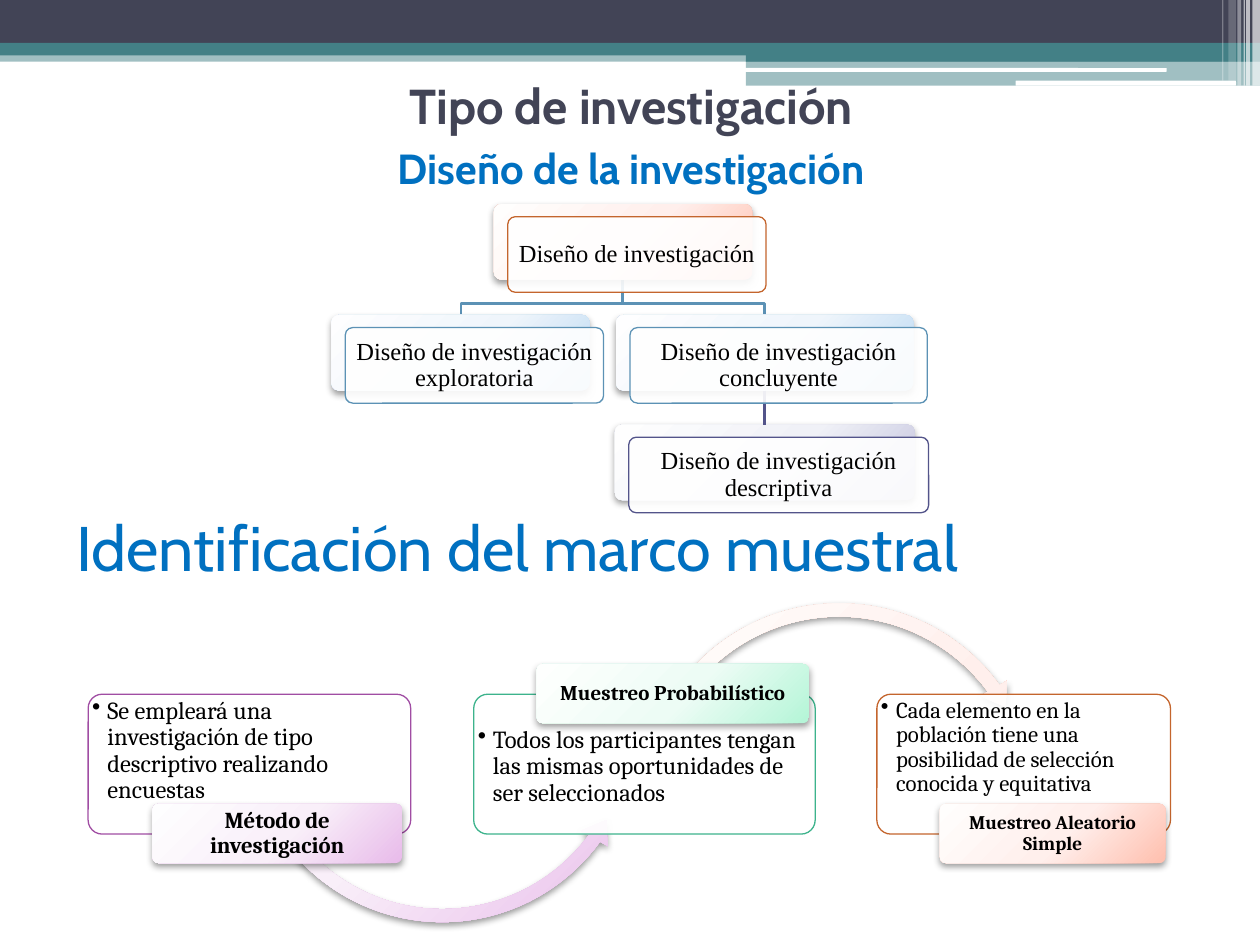
from dataclasses import dataclass
from typing import Any

from lxml.etree import SubElement
from pptx import Presentation
from pptx.dml.color import RGBColor
from pptx.enum.shapes import MSO_CONNECTOR as LINK, MSO_SHAPE as SHAPE
from pptx.enum.text import MSO_ANCHOR as ANCHOR, PP_ALIGN as ALIGN
from pptx.oxml import parse_xml
from pptx.oxml.ns import nsdecls, qn
from pptx.util import Inches, Pt

ORANGE = ["FFFEFD", "FFEFEC", "FFBFAE"]
PURPLE = ["FEFEFF", "F9EFF9", "E8BBEA"]
GREEN = ["FEFFFE", "EDFCF5", "B4F5D7"]
BLUE = ["FEFEFF", "EFF5FB", "BAD8F2"]
INDIGO = ["FEFEFE", "F0F1F7", "C2C2DD"]


def rgb(code):
    """Turn a hex string into a colour."""
    return RGBColor.from_string(code)


def write(frame, text, size, font, color="000000", bold=False, align=ALIGN.CENTER,
          anchor=ANCHOR.MIDDLE, spacing=None, insets=None, bullet=None, new=False, before=0):
    """Write one formatted paragraph in a text frame."""
    frame.word_wrap = True
    frame.vertical_anchor = anchor
    if insets:
        (frame.margin_left, frame.margin_top,
         frame.margin_right, frame.margin_bottom) = map(Inches, insets)
    paragraph = frame.add_paragraph() if new else frame.paragraphs[0]
    paragraph.alignment = align
    paragraph.space_before = Pt(before)
    if spacing:
        paragraph.line_spacing = spacing
    run = paragraph.add_run()
    run.text = text
    run.font.size, run.font.name, run.font.bold = Pt(size), font, bold
    run.font.color.rgb = rgb(color)
    if bullet:
        properties = paragraph._p.get_or_add_pPr()
        properties.set("marL", str(Inches(0.12)))
        properties.set("indent", str(-Inches(0.12)))
        SubElement(properties, qn("a:buChar"), char=bullet)


@dataclass
class Deck:
    """Hold the style and the current slide."""

    slide: Any
    heading: str = "Cabin"
    body: str = "Cambria"
    chart: str = "Times New Roman"

    def shape(self, box, fill, opacity=100, line=None, kind=SHAPE.RECTANGLE, adjust=()):
        """Add a flat preset shape."""
        shape = self.slide.shapes.add_shape(kind, *map(Inches, box))
        shape.shadow.inherit = False
        shape.fill.solid()
        shape.fill.fore_color.rgb = rgb(fill)
        if opacity < 100:
            color = shape._element.spPr.find(".//" + qn("a:srgbClr"))
            SubElement(color, qn("a:alpha"), val=str(opacity * 1000))
        if line:
            shape.line.color.rgb = rgb(line)
            shape.line.width = Pt(0.75)
        else:
            shape.line.fill.background()
        for index, value in enumerate(adjust):
            shape.adjustments[index] = value
        return shape

    def glossy(self, box, colors, kind=SHAPE.ROUNDED_RECTANGLE, adjust=(0.1,)):
        """Add a shape with a radial gradient and a soft shadow."""
        shape = self.shape(box, colors[0], kind=kind, adjust=adjust)
        properties = shape._element.spPr
        stops = "".join(f'<a:gs pos="{place}000"><a:srgbClr val="{color}"/></a:gs>'
                        for place, color in zip((0, 55, 100), colors))
        gradient = parse_xml(
            f'<a:gradFill {nsdecls("a")} rotWithShape="1"><a:gsLst>{stops}</a:gsLst>'
            '<a:path path="circle"><a:fillToRect l="-40000" t="-90000" r="140000" b="190000"/>'
            '</a:path></a:gradFill>')
        properties.replace(properties.find(qn("a:solidFill")), gradient)
        properties.find(qn("a:effectLst")).append(parse_xml(
            f'<a:outerShdw {nsdecls("a")} blurRad="{Pt(4.1)}" dist="{Pt(2)}" dir="5400000" '
            'rotWithShape="0"><a:srgbClr val="000000"><a:alpha val="40000"/></a:srgbClr>'
            '</a:outerShdw>'))
        return shape

    def frame(self, box, line):
        """Add a translucent outlined card."""
        return self.shape(box, "FFFFFF", 90, line, SHAPE.ROUNDED_RECTANGLE, (0.1,))

    def text(self, box):
        """Add an empty text box and return its frame."""
        return self.slide.shapes.add_textbox(*map(Inches, box)).text_frame

    def elbow(self, points, color):
        """Add an open line through right-angled points."""
        start, *rest = [(Inches(x), Inches(y)) for x, y in points]
        builder = self.slide.shapes.build_freeform(*start)
        builder.add_line_segments(rest, close=False)
        line = builder.convert_to_shape()
        line.shadow.inherit = False
        line.fill.background()
        line.line.color.rgb, line.line.width = rgb(color), Pt(1.5)

    def link(self, upper, lower, color):
        """Join the bottom of one card to the top of another."""
        line = self.slide.shapes.add_connector(LINK.STRAIGHT, 0, 0, 0, 0)
        line.begin_connect(upper, 2)
        line.end_connect(lower, 0)
        line.line.color.rgb, line.line.width = rgb(color), Pt(1.5)
        SubElement(line._element.spPr, qn("a:effectLst"))

    def banner(self):
        """Draw the coloured bands and stripes at the top."""
        for box, color, opacity in [
                ((0, 0.4, 10, 0.09), "438086", 50), ((0, 0, 10, 0.34), "424456", 100),
                ((0, 0.34, 10, 0.1), "438086", 100), ((5.92, 0.39, 4.08, 0.1), "438086", 100),
                ((5.92, 0.48, 4.08, 0.2), "438086", 50)]:
            self.shape(box, color, opacity)
        for box in [(5.91, 0.54, 3.35, 0.03), (8.06, 0.64, 1.75, 0.04)]:
            self.shape(box, "FFFFFF", kind=SHAPE.ROUNDED_RECTANGLE)
        for left, width, height, opacity in [
                (9.94, 0.06, 0.68, 65), (9.89, 0.03, 0.68, 65), (9.87, 0.01, 0.68, 60),
                (9.82, 0.03, 0.68, 40), (9.75, 0.06, 0.64, 20), (9.7, 0.01, 0.64, 30)]:
            self.shape((left, 0, width, height), "FFFFFF", opacity)

    def headings(self):
        """Write the headings of both halves."""
        write(self.text((0.51, 3.99, 9, 0.69)), "Identificación del marco muestral", 36,
              self.heading, "0070C0", align=ALIGN.LEFT)
        top = self.text((0.51, 0.64, 9, 0.85))
        write(top, "Tipo de investigación", 28, self.heading, "424456", bold=True)
        write(top, "Diseño de la investigación", 24, self.heading, "0070C0", bold=True,
              new=True, before=5)

    def sampling(self):
        """Draw the three sampling steps and their arrows."""
        left_turn = ((1.89, 4.15, 3.24, 3.24), PURPLE, SHAPE.LEFT_CIRCULAR_ARROW,
                     (0.032, 4, 21.756, 90.245, 0.038))
        right_turn = ((5.02, 4.72, 3.28, 3.28), ORANGE, SHAPE.CIRCULAR_ARROW,
                      (0.032, 3.943, 194.301, 125.755, 0.037))
        for left, width, line, inset, size, detail, arrow, tag_box, colors, tag_size, tag in [
                (0.7, 2.56, "A04DA3", 0, 14,
                 "Se empleará una investigación de tipo descriptivo realizando encuestas",
                 left_turn, (1.21, 6.38, 1.98, 0.47), PURPLE, 13, "Método de investigación"),
                (3.76, 2.71, "3DB38C", 0.23, 14,
                 "Todos los participantes tengan las mismas oportunidades de ser seleccionados",
                 right_turn, (4.26, 5.27, 2.16, 0.47), GREEN, 12, "Muestreo Probabilístico"),
                (6.96, 2.33, "C4652D", 0, 13,
                 "Cada elemento en la población tiene una posibilidad de selección conocida "
                 "y equitativa",
                 None, (7.46, 6.38, 1.79, 0.47), ORANGE, 11, "Muestreo Aleatorio Simple")]:
            card = self.frame((left, 5.51, width, 1.11), line)
            write(card.text_frame, detail, size, self.body, align=ALIGN.LEFT,
                  anchor=ANCHOR.TOP, spacing=0.9, insets=(0, inset, 0, 0), bullet="•")
            if arrow:
                self.glossy(*arrow)
            write(self.glossy(tag_box, colors).text_frame, tag, tag_size, self.body,
                  bold=True, spacing=0.9, insets=(0.03, 0.01, 0.03, 0.01))

    def designs(self):
        """Draw the tree of research designs."""
        for child in (6.07, 3.66):
            self.elbow([(4.94, 2.22), (4.94, 2.41), (child, 2.41), (child, 2.5)], "5C92B5")
        nodes = [(3.92, 1.62, 2.05, ORANGE, "C4652D", ""),
                 (2.63, 2.5, 2.05, BLUE, "5C92B5", " exploratoria"),
                 (4.89, 2.5, 2.36, BLUE, "5C92B5", " concluyente"),
                 (4.88, 3.37, 2.38, INDIGO, "53548A", " descriptiva")]
        backs = [self.glossy((left, top, width, 0.6), colors)
                 for left, top, width, colors, _, _ in nodes]
        self.link(backs[2], backs[3], "53548A")
        for left, top, width, _, line, ending in nodes:
            card = self.frame((left + 0.11, top + 0.1, width, 0.6), line)
            write(card.text_frame, "Diseño de investigación" + ending, 14, self.chart,
                  spacing=0.9, insets=(0.04,) * 4)


def main():
    """Build and save the slide."""
    presentation = Presentation()
    presentation.slide_width, presentation.slide_height = Inches(10), Inches(7.5)
    deck = Deck(presentation.slides.add_slide(presentation.slide_layouts[6]))
    deck.banner()
    deck.headings()
    deck.sampling()
    deck.designs()
    presentation.save("out.pptx")


if __name__ == "__main__":
    main()
